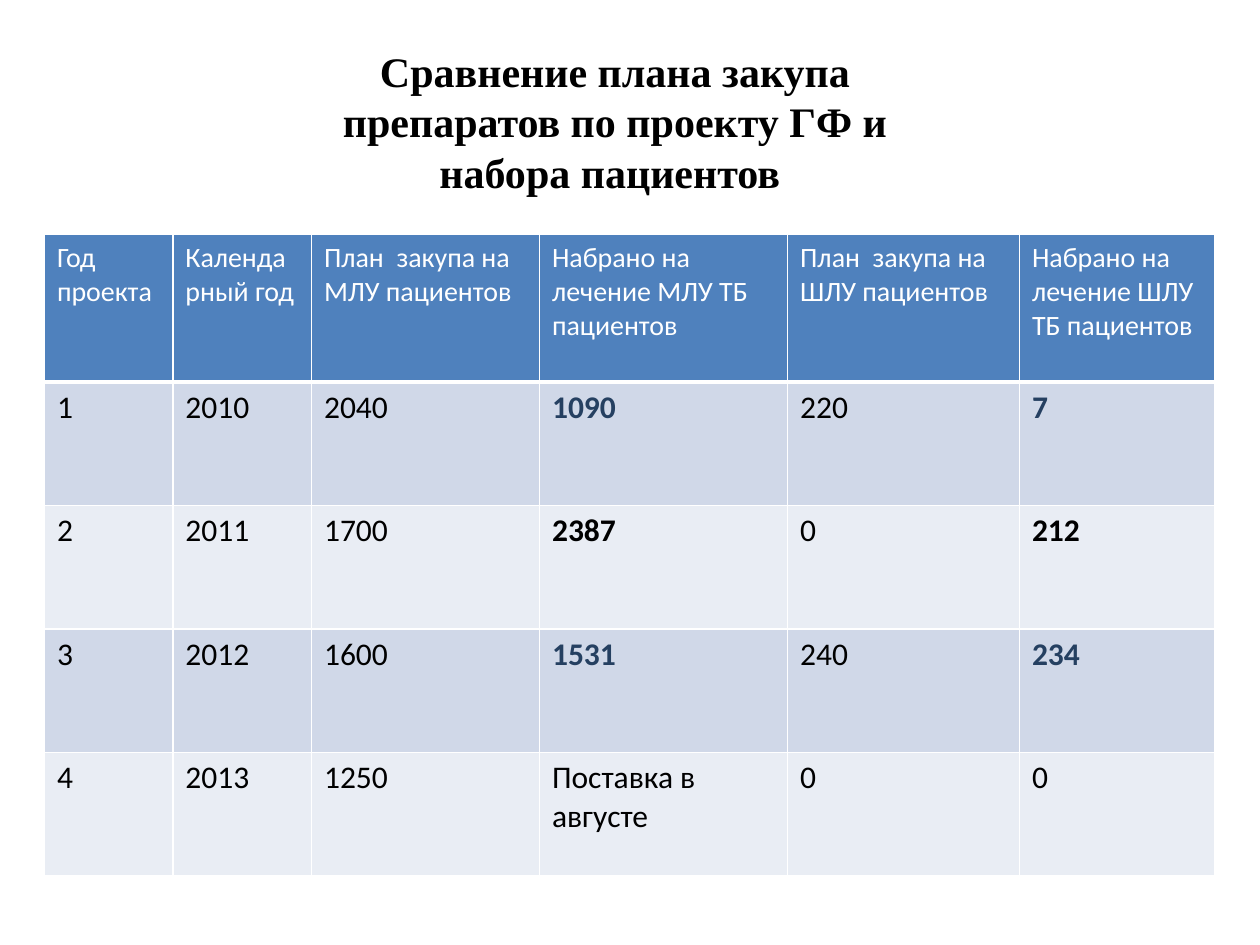
from lxml.etree import SubElement
from pptx import Presentation
from pptx.dml.color import RGBColor
from pptx.enum.text import MSO_ANCHOR as Anchor, MSO_AUTO_SIZE as AutoSize, PP_ALIGN as Align
from pptx.oxml.ns import qn
from pptx.util import Pt

WHITE, BLACK, NAVY = "FFFFFF", "000000", "254061"
HEADER_FILL = "4F81BD"
BAND_FILLS = ("D0D8E8", "E9EDF4")
HEADINGS = (
    "Год проекта",
    "Календарный год",
    "План  закупа на МЛУ пациентов",
    "Набрано на лечение МЛУ ТБ пациентов",
    "План  закупа на ШЛУ пациентов",
    "Набрано на лечение ШЛУ ТБ пациентов",
)
PROJECT_YEARS = (
    ("1", "2010", "2040", "1090", "220", "7"),
    ("2", "2011", "1700", "2387", "0", "212"),
    ("3", "2012", "1600", "1531", "240", "234"),
    ("4", "2013", "1250", "Поставка в августе", "0", "0"),
)
ENROLLED_COLUMNS = (3, 5)
ENROLLED_COLORS = (NAVY, BLACK, NAVY)
COLUMN_WIDTHS = (73.4, 79.2, 130.3, 141.8, 132.5, 111.6)
HEADER_HEIGHT, YEAR_HEIGHT = 84.2, 70.6


def color(value):
    return RGBColor.from_string(value)


def write(frame, text, size=18, font="Calibri", ink=BLACK, bold=False, align=Align.LEFT):
    paragraph = frame.paragraphs[0]
    paragraph.alignment = align
    run = paragraph.add_run()
    run.text = text
    run.font.name = font
    run.font.size = Pt(size)
    run.font.bold = bold
    run.font.color.rgb = color(ink)


def paint(cell, value):
    cell.fill.solid()
    cell.fill.fore_color.rgb = color(value)


def outline_heading(cell):
    properties = cell._tc.get_or_add_tcPr()
    for side, weight in (("L", 1), ("R", 1), ("T", 1), ("B", 3)):
        line = SubElement(properties, qn(f"a:ln{side}"), w=str(Pt(weight)))
        SubElement(SubElement(line, qn("a:solidFill")), qn("a:srgbClr"), val=WHITE)


def place_title(slide, left, top, width, height):
    title = slide.shapes.title
    title.left, title.top, title.width, title.height = map(Pt, (left, top, width, height))
    frame = title.text_frame
    frame.word_wrap = True
    frame.auto_size = AutoSize.NONE
    frame.vertical_anchor = Anchor.MIDDLE
    write(frame, "Сравнение плана закупа препаратов по проекту ГФ и набора пациентов ",
          size=24, font="Times New Roman", bold=True, align=Align.CENTER)


def place_comparison(slide, left, top):
    height = HEADER_HEIGHT + YEAR_HEIGHT * len(PROJECT_YEARS)
    table = slide.shapes.add_table(
        len(PROJECT_YEARS) + 1, len(HEADINGS),
        Pt(left), Pt(top), Pt(sum(COLUMN_WIDTHS)), Pt(height)).table
    for column, width in zip(table.columns, COLUMN_WIDTHS):
        column.width = Pt(width)
    for row in table.rows:
        row.height = Pt(YEAR_HEIGHT)
    table.rows[0].height = Pt(HEADER_HEIGHT)

    for column, heading in enumerate(HEADINGS):
        cell = table.cell(0, column)
        outline_heading(cell)
        paint(cell, HEADER_FILL)
        write(cell.text_frame, heading, size=16, ink=WHITE)

    for index, figures in enumerate(PROJECT_YEARS):
        for column, figure in enumerate(figures):
            cell = table.cell(index + 1, column)
            enrolled = column in ENROLLED_COLUMNS and index < len(ENROLLED_COLORS)
            paint(cell, BAND_FILLS[index % 2])
            write(cell.text_frame, figure, bold=enrolled,
                  ink=ENROLLED_COLORS[index] if enrolled else BLACK)


def main():
    deck = Presentation()
    deck.slide_width, deck.slide_height = Pt(720), Pt(540)
    slide = deck.slides.add_slide(deck.slide_layouts[5])
    place_title(slide, 161.3, 15.1, 380.2, 108)
    place_comparison(slide, 25.4, 134)
    deck.save("out.pptx")


if __name__ == "__main__":
    main()
